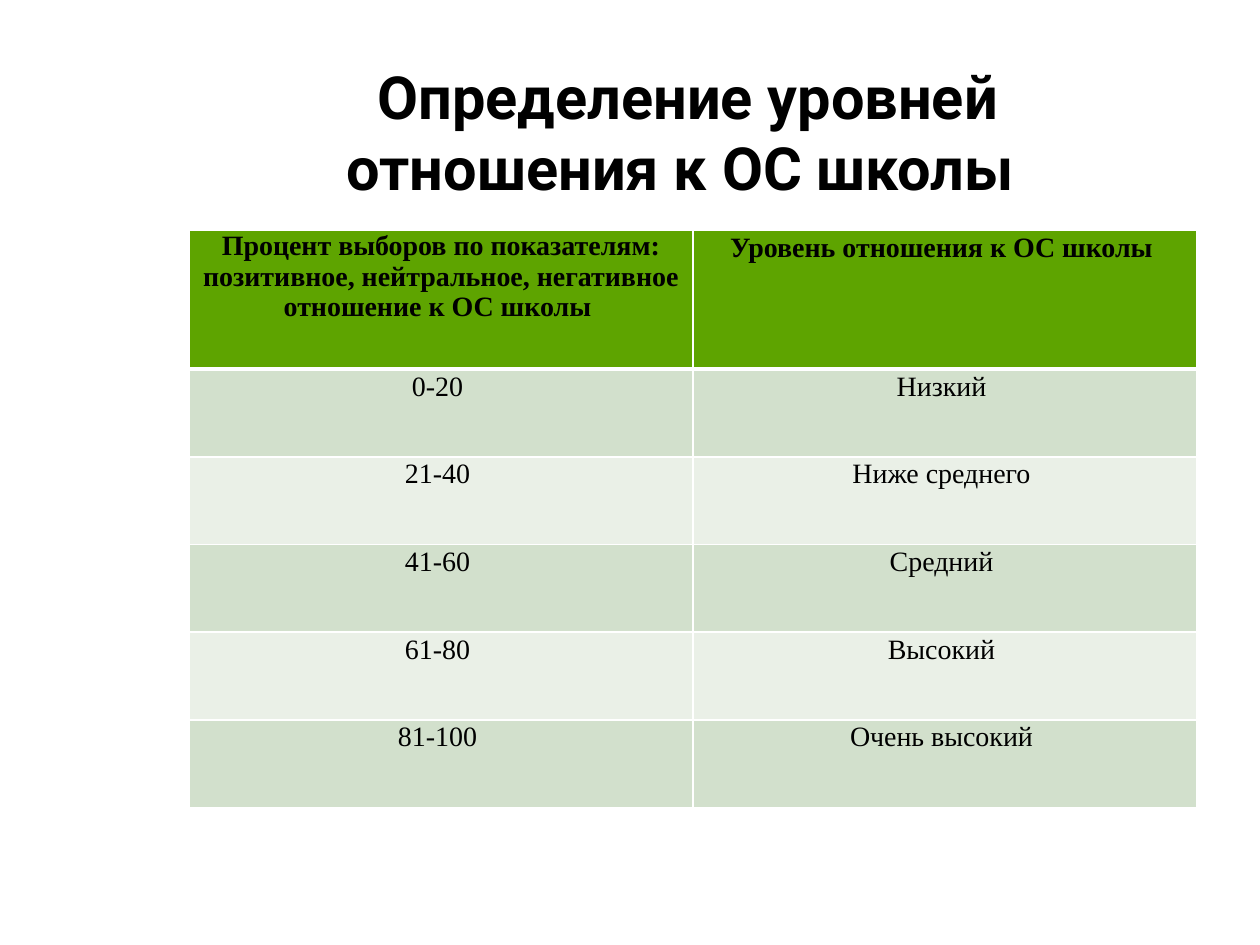
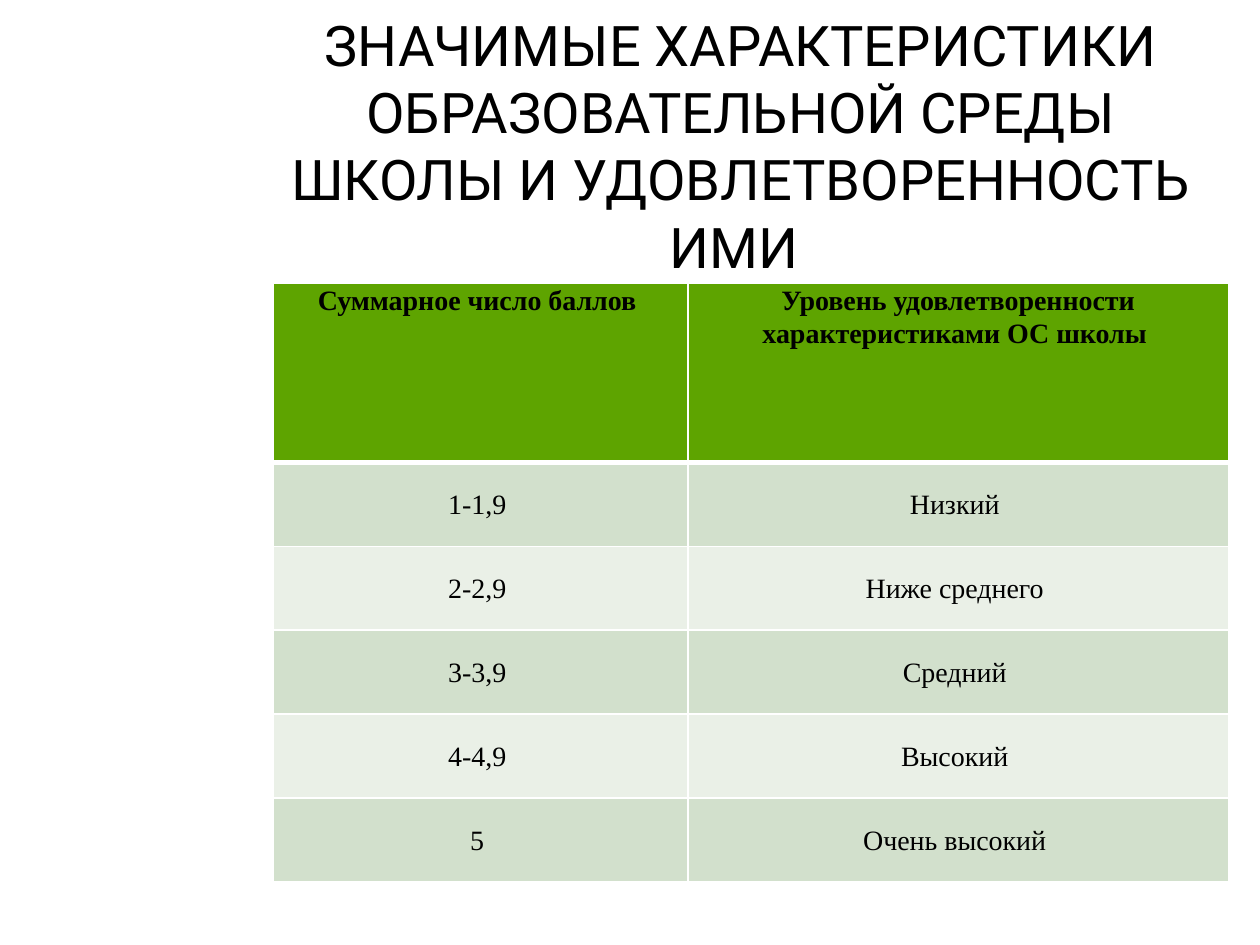
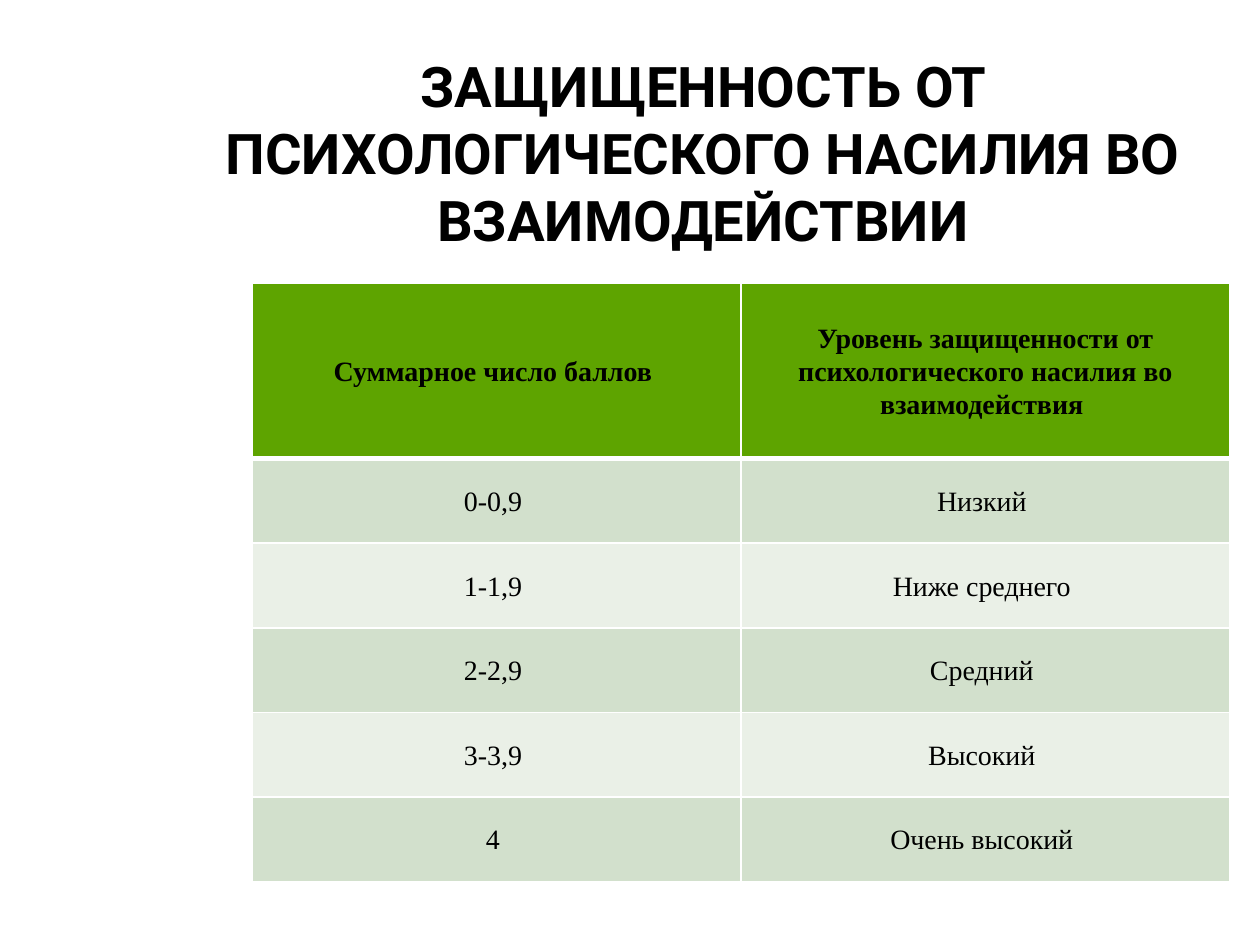
from lxml import etree
from pptx import Presentation, util as u
from pptx.dml.color import RGBColor
from pptx.enum import text as t
from pptx.oxml import ns

BLACK = RGBColor(0x00, 0x00, 0x00)
WHITE = RGBColor(0xFF, 0xFF, 0xFF)
GREEN = RGBColor(0x5E, 0xA4, 0x00)
BANDS = (RGBColor(0xEA, 0xF0, 0xE7), RGBColor(0xD2, 0xE0, 0xCC))
HEAD_FONT, CELL_FONT = "Roboto", "Times New Roman"
LEVELS = ("Низкий ", "Ниже среднего ", "Средний ", "Высокий ", "Очень высокий ")
TOP, MID = t.MSO_ANCHOR.TOP, t.MSO_ANCHOR.MIDDLE


def add_run(par, words, face, size, bold):
    par.alignment = t.PP_ALIGN.CENTER
    run = par.add_run()
    run.text = words
    run.font.name = face
    run.font.size = u.Pt(size)
    run.font.bold = bold
    run.font.color.rgb = BLACK


def add_title(slide, words, box, size=32, bold=True, foot=0.05):
    frame = slide.shapes.add_textbox(*map(u.Inches, box)).text_frame
    frame.word_wrap = True
    frame.vertical_anchor = MID
    frame.margin_bottom = u.Inches(foot)
    add_run(frame.paragraphs[0], words, HEAD_FONT, size, bold)


def set_edge(cell, side, width):
    props = cell._tc.get_or_add_tcPr()
    line = etree.SubElement(props, ns.qn("a:ln" + side), w=str(u.Pt(width)))
    fill = etree.SubElement(line, ns.qn("a:solidFill"))
    etree.SubElement(fill, ns.qn("a:srgbClr"), val=str(WHITE))


def add_cell(cell, words, row, anchor):
    edges = {"L": 1, "R": 1, "T": 3 if row == 1 else 1, "B": 3 if row == 0 else 1}
    for side, width in edges.items():
        set_edge(cell, side, width)
    cell.fill.solid()
    cell.fill.fore_color.rgb = BANDS[row % 2] if row else GREEN
    cell.margin_left = cell.margin_right = u.Inches(0.08)
    cell.margin_top = cell.margin_bottom = 0
    cell.vertical_anchor = anchor
    par = cell.text_frame.paragraphs[0]
    par.line_spacing = 1.07
    add_run(par, words, CELL_FONT, 16, row == 0)


def add_scale(slide, box, cols, head, names, marks, anchors):
    data = [names, *zip(marks, LEVELS)]
    grid = slide.shapes.add_table(len(data), len(cols), *map(u.Inches, box)).table
    grid.first_row = grid.horz_banding = False
    for col, width in zip(grid.columns, cols):
        col.width = u.Inches(width)
    step = (box[3] - head) / len(marks)
    for row, pair in enumerate(data):
        grid.rows[row].height = u.Inches(step if row else head)
        for col, words in enumerate(pair):
            add_cell(grid.cell(row, col), words, row, anchors[row > 0])
    return grid


def main():
    deck = Presentation()
    deck.slide_width, deck.slide_height = u.Inches(10), u.Inches(7.5)
    views, needs, safety = (deck.slides.add_slide(deck.slide_layouts[6]) for _ in range(3))

    add_title(views, "Определение уровней отношения к ОС школы ",
              (1.67, 0.5, 7.58, 1.08), size=34)
    grid = add_scale(
        views, (1.5, 1.83, 8, 4.58), (4, 4), 1.1,
        ("Процент выборов по показателям: позитивное, нейтральное, негативное "
         "отношение к ОС школы ", "Уровень отношения к ОС школы "),
        ("0-20 ", "21-40 ", "41-60 ", "61-80 ", "81-100 "), (TOP, TOP))
    first = grid.cell(0, 0).text_frame.paragraphs[0]
    first.line_spacing, first.space_after = 0.99, u.Pt(2.3)

    add_title(needs, "ЗНАЧИМЫЕ ХАРАКТЕРИСТИКИ ОБРАЗОВАТЕЛЬНОЙ СРЕДЫ ШКОЛЫ "
              "И УДОВЛЕТВОРЕННОСТЬ ИМИ ", (1.92, 0.5, 7.92, 1.83), bold=False, foot=0.58)
    add_scale(
        needs, (2.17, 2.25, 7.58, 4.75), (3.29, 4.29), 1.42,
        ("Суммарное число баллов ", "Уровень удовлетворенности характеристиками ОС школы "),
        ("1-1,9 ", "2-2,9 ", "3-3,9 ", "4-4,9 ", "5 "), (TOP, MID))

    add_title(safety, "ЗАЩИЩЕННОСТЬ ОТ ПСИХОЛОГИЧЕСКОГО НАСИЛИЯ ВО ВЗАИМОДЕЙСТВИИ",
              (1.58, 0.33, 8, 1.75))
    add_scale(
        safety, (2, 2.25, 7.75, 4.75), (3.88, 3.88), 1.39,
        ("Суммарное число баллов ",
         "Уровень защищенности от психологического насилия во взаимодействия "),
        ("0-0,9 ", "1-1,9 ", "2-2,9 ", "3-3,9 ", "4 "), (MID, MID))

    deck.save("out.pptx")


if __name__ == "__main__":
    main()
